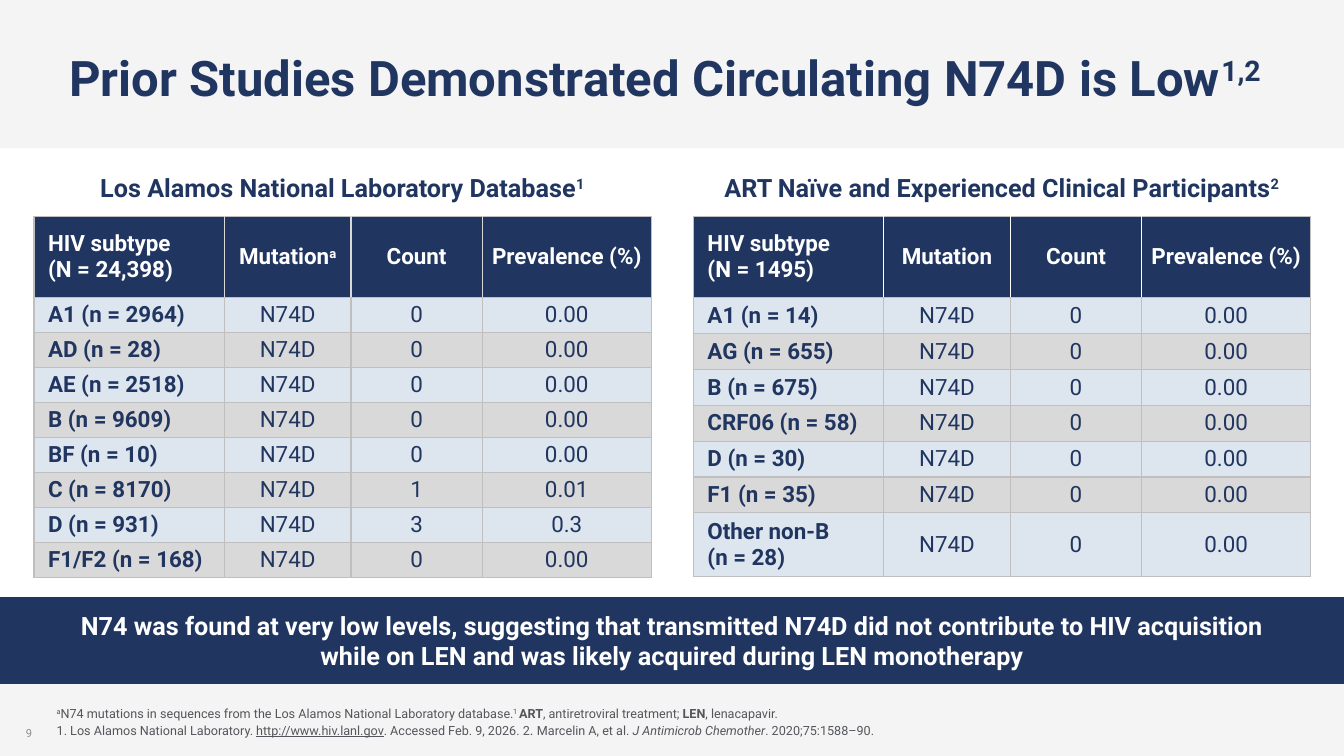
from dataclasses import dataclass, replace

from lxml import etree
from pptx import Presentation
from pptx.dml.color import RGBColor
from pptx.enum.shapes import MSO_SHAPE
from pptx.enum.text import MSO_ANCHOR, PP_ALIGN
from pptx.oxml.ns import qn
from pptx.util import Emu, Inches, Pt

RECT = MSO_SHAPE.RECTANGLE
LEFT, CENTER = PP_ALIGN.LEFT, PP_ALIGN.CENTER
TOP, MIDDLE, BOTTOM = MSO_ANCHOR.TOP, MSO_ANCHOR.MIDDLE, MSO_ANCHOR.BOTTOM

COLORS = {
    "navy": "203661", "white": "FFFFFF", "band": "F4F4F4", "note": "54565B",
    "number": "8A8B8D", "blue_row": "DDE5EF", "gray_row": "D9D9D9", "border": "BFBFBF",
}
FONT = "Roboto"
COLS, ROWS = 160, 90
SLIDE_W, SLIDE_H = Inches(40 / 3), Inches(7.5)
CELL = SLIDE_W // COLS
TABLE_TOP = 25.8
COL_WIDTHS = (22.65, 15.1, 15.6, 20.15)
HEADER_ROWS = 9.65


@dataclass(frozen=True)
class Run:
    text: str
    size: float
    color: str
    bold: bool = False
    italic: bool = False
    underline: bool = False
    raised: bool = False


@dataclass(frozen=True)
class Box:
    col: float
    row: float
    cols: float
    rows: float


@dataclass(frozen=True)
class Study:
    col: float
    heading: str
    heading_box: Box
    source: str
    total: str
    note_mark: str
    divider: str
    row_heights: tuple[float, ...]
    rows: tuple[tuple[str, str, str], ...]


def grid(n: float) -> Emu:
    return Emu(round(n * CELL))


def rgb(name: str) -> RGBColor:
    return RGBColor.from_string(COLORS[name])


def format_run(r, run: Run) -> None:
    f = r.font
    f.name, f.size, f.bold = FONT, Pt(run.size), run.bold
    f.italic, f.underline = run.italic, run.underline
    f.color.rgb = rgb(run.color)
    if run.raised:
        r._r.get_or_add_rPr().set("baseline", "30000")


def write(tf, paragraphs: list[list[Run]], align=LEFT) -> None:
    for i, runs in enumerate(paragraphs):
        p = tf.paragraphs[0] if i == 0 else tf.add_paragraph()
        p.alignment = align
        p.text = runs[0].text
        for r in p.runs:
            format_run(r, runs[0])
        for run in runs[1:]:
            r = p.add_run()
            r.text = run.text
            format_run(r, run)


def add_rect(s, box: Box, color: str):
    sp = s.shapes.add_shape(RECT, grid(box.col), grid(box.row), grid(box.cols), grid(box.rows))
    sp.shadow.inherit = False
    sp.fill.solid()
    sp.fill.fore_color.rgb = rgb(color)
    sp.line.fill.background()
    return sp


def add_text(s, box: Box, paragraphs: list[list[Run]], align=LEFT, anchor=TOP, wrap: bool = True):
    sp = s.shapes.add_textbox(grid(box.col), grid(box.row), grid(box.cols), grid(box.rows))
    tf = sp.text_frame
    tf.word_wrap, tf.vertical_anchor = wrap, anchor
    write(tf, paragraphs, align)
    return tf


def set_borders(cell, colors: dict[str, str]) -> None:
    tc_pr = cell._tc.get_or_add_tcPr()
    for side, color in colors.items():
        ln = etree.SubElement(tc_pr, qn(f"a:ln{side}"), w=str(Pt(1)))
        fill = etree.SubElement(ln, qn("a:solidFill"))
        etree.SubElement(fill, qn("a:srgbClr"), val=COLORS[color])


def fill_cell(cell, paragraphs: list[list[Run]], col: int, color: str, divider: str) -> None:
    last = len(COL_WIDTHS) - 1
    set_borders(cell, {
        "L": divider if col > 0 else "border", "R": divider if col < last else "border",
        "T": "border", "B": "border",
    })
    cell.fill.solid()
    cell.fill.fore_color.rgb = rgb(color)
    cell.margin_left = cell.margin_right = cell.margin_top = cell.margin_bottom = Inches(0.04)
    cell.vertical_anchor = MIDDLE
    write(cell.text_frame, paragraphs, LEFT if col == 0 else CENTER)
    if col == 0:
        for p in cell.text_frame.paragraphs:
            p._p.get_or_add_pPr().set("marL", str(Inches(0.1)))


def add_study(s, study: Study) -> None:
    heading = Run(study.heading, 18, "navy", bold=True)
    add_text(s, study.heading_box, [[heading, replace(heading, text=study.source, raised=True)]],
             CENTER, wrap=False)
    heights = (HEADER_ROWS, *study.row_heights)
    table = s.shapes.add_table(len(heights), len(COL_WIDTHS), grid(study.col), grid(TABLE_TOP),
                               grid(sum(COL_WIDTHS)), grid(sum(heights))).table
    table.first_row = table.horz_banding = False
    for column, width in zip(table.columns, COL_WIDTHS):
        column.width = grid(width)
    for row, height in zip(table.rows, heights):
        row.height = grid(height)
    head = Run("", 16, "white", bold=True)
    titles = (f"HIV subtype\v(N = {study.total})", "Mutation", "Count", "Prevalence (%)")
    for c, title in enumerate(titles):
        runs = [replace(head, text=title)]
        if title == "Mutation" and study.note_mark:
            runs.append(replace(head, text=study.note_mark, raised=True))
        fill_cell(table.cell(0, c), [runs], c, "navy", study.divider)
    for i, (subtype, count, prevalence) in enumerate(study.rows, 1):
        color = "blue_row" if i % 2 else "gray_row"
        for c, text in enumerate((subtype, "N74D", count, prevalence)):
            lines = [[Run(line, 16, "navy", bold=c == 0)] for line in text.split("\n")]
            fill_cell(table.cell(i, c), lines, c, color, "border")


STUDIES = (
    Study(82.55, "ART Naïve and Experienced Clinical Participants", Box(83.5, 19.9, 71.5, 4.85),
          "2", "1495", "", "white", (4.27,) * 6 + (7.6,),
          tuple((name, "0", "0.00") for name in (
              "A1 (n = 14)", "AG (n = 655)", "B (n = 675)", "CRF06 (n = 58)",
              "D (n = 30)", "F1 (n = 35)", "Other non-B\n(n = 28)"))),
    Study(4.05, "Los Alamos National Laboratory Database", Box(9.85, 19.9, 61.8, 4.85),
          "1", "24,398", "a", "gray_row", (4.08,) * 8,
          (("A1 (n = 2964)", "0", "0.00"), ("AD (n = 28)", "0", "0.00"),
           ("AE (n = 2518)", "0", "0.00"), ("B (n = 9609)", "0", "0.00"),
           ("BF (n = 10)", "0", "0.00"), ("C (n = 8170)", "1", "0.01"),
           ("D (n = 931)", "3", "0.3"), ("F1/F2 (n = 168)", "0", "0.00"))),
)
TITLE = Run("Prior Studies Demonstrated Circulating N74D is Low", 35, "navy", bold=True)
BANNER = (
    "N74 was found at very low levels, suggesting that transmitted N74D did not contribute to HIV acquisition",
    "while on LEN and was likely acquired during LEN monotherapy",
)
NOTE = Run("", 9, "note")
FOOTNOTES = [
    [replace(NOTE, text="a", raised=True),
     replace(NOTE, text="N74 mutations in sequences from the Los Alamos National Laboratory database."),
     replace(NOTE, text="1 ", raised=True), replace(NOTE, text="ART", bold=True),
     replace(NOTE, text=", antiretroviral treatment; "), replace(NOTE, text="LEN", bold=True),
     replace(NOTE, text=", lenacapavir.")],
    [replace(NOTE, text="1. Los Alamos National Laboratory. "),
     replace(NOTE, text="http://www.hiv.lanl.gov", underline=True),
     replace(NOTE, text=". Accessed Feb. 9, 2026. 2"), replace(NOTE, text=". ", size=10),
     replace(NOTE, text="Marcelin A, et al. "),
     replace(NOTE, text="J Antimicrob Chemother", italic=True),
     replace(NOTE, text=". 2020;75:1588–90.")],
]


def main() -> None:
    prs = Presentation()
    prs.slide_width, prs.slide_height = SLIDE_W, SLIDE_H
    s = prs.slides.add_slide(prs.slide_layouts[6])
    add_rect(s, Box(0, 80.2, COLS, ROWS - 80.2), "band")
    add_rect(s, Box(0, 0, COLS, 17.64), "band")
    add_text(s, Box(1.1, 83.8, 4.7, 4.8), [[Run("9", 8, "number")]], CENTER, BOTTOM)
    tf = add_text(s, Box(7.08, 3.24, COLS - 7.08, 12.72),
                  [[TITLE, replace(TITLE, text="1,2", raised=True)]], anchor=MIDDLE)
    tf.paragraphs[0].line_spacing = 0.9
    sp = add_rect(s, Box(0, 71.3, COLS, 9.96), "navy")
    sp.line.color.rgb = rgb("navy")
    sp.line.width = Pt(2)
    sp.text_frame.word_wrap, sp.text_frame.vertical_anchor = True, MIDDLE
    write(sp.text_frame, [[Run(line, 18, "white", bold=True)] for line in BANNER], CENTER)
    tf = add_text(s, Box(6.75, 82.7, 148.2, 5.76), FOOTNOTES, anchor=BOTTOM)
    tf.margin_left = tf.margin_right = 0
    for study in STUDIES:
        add_study(s, study)
    prs.save("out.pptx")


if __name__ == "__main__":
    main()
